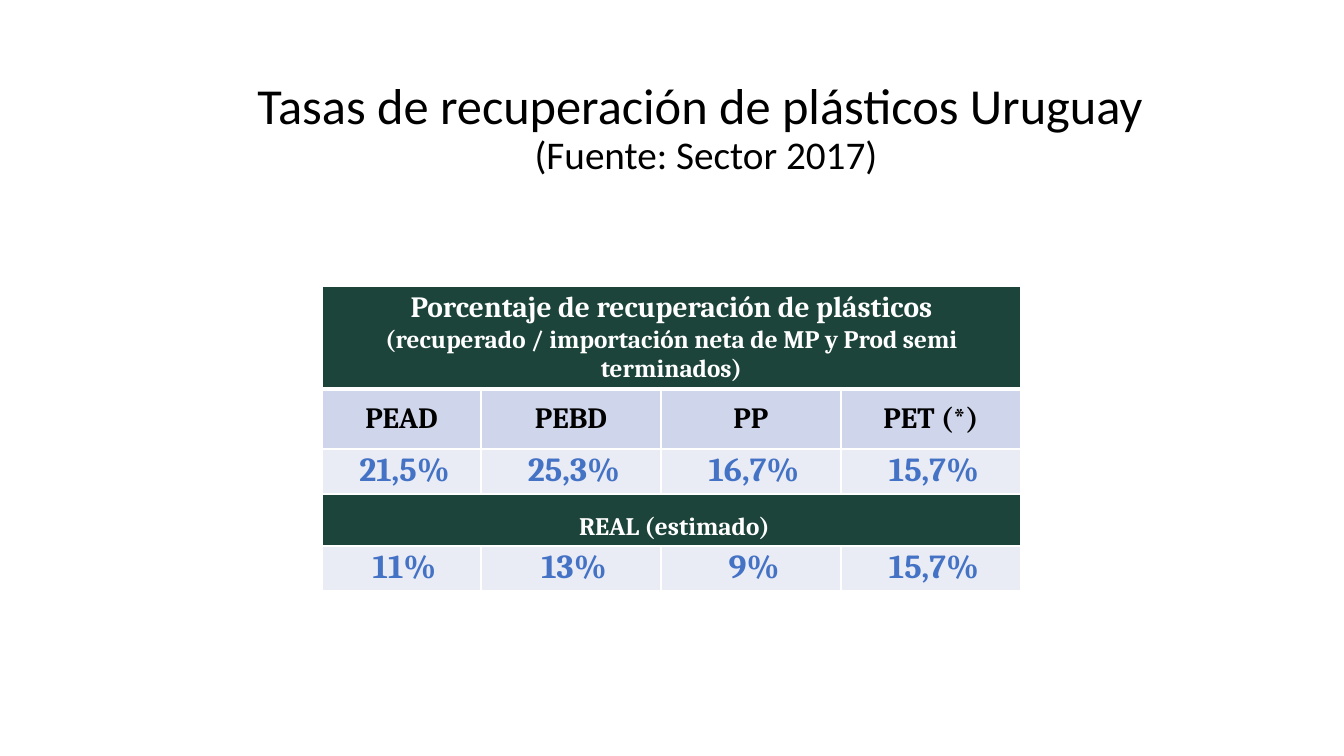
"""Slide with the recovery rates of plastics in Uruguay."""
from pptx import Presentation
from pptx import util as u
from pptx.dml.color import RGBColor
from pptx.enum import text
from pptx.oxml.ns import qn
from lxml import etree

WHITE = RGBColor(0xFF, 0xFF, 0xFF)
BLACK = RGBColor(0, 0, 0)
GREEN = RGBColor(0x1C, 0x44, 0x3A)
BLUE = RGBColor(0x44, 0x72, 0xC4)
LAVENDER = RGBColor(0xCF, 0xD5, 0xEA)
PALE = RGBColor(0xE9, 0xEB, 0xF5)

TITLE = [("Tasas de recuperación de plásticos Uruguay ", 36), ("(Fuente: Sector 2017)", 28)]
HEADING = [("Porcentaje de recuperación de plásticos", 21),
           ("(recuperado / importación neta de MP y Prod semi terminados)", 18)]
PLASTICS = ["PEAD", "PEBD", "PP", "PET (*)"]
DECLARED = ["21,5%", "25,3%", "16,7%", "15,7%"]
REAL = ["11%", "13%", "9%", "15,7%"]

TITLE_BOX = (199, 76, 1014, 175)
TABLE_AT = (322, 286)
COL_WIDTHS = [159, 180, 180, 180]
MIDDLE = (text.MSO_ANCHOR.MIDDLE, (7, 4, 7, 4))
BOTTOM = (text.MSO_ANCHOR.BOTTOM, (7, 1, 1, 4))
ROWS = [
    (103, [HEADING], GREEN, WHITE, MIDDLE),
    (60, [[(name, 21)] for name in PLASTICS], LAVENDER, BLACK, MIDDLE),
    (45, [[(rate, 24)] for rate in DECLARED], PALE, BLUE, BOTTOM),
    (52, [[("REAL (estimado)", 18)]], GREEN, WHITE, BOTTOM),
    (45, [[(rate, 24)] for rate in REAL], PALE, BLUE, BOTTOM),
]


def px(n):
    return u.Emu(round(n * 914400 / 100.8))


def write(tf, lines, *, font, color, bold=False, spacing=None):
    p = tf.paragraphs[0]
    p.alignment = text.PP_ALIGN.CENTER
    p.line_spacing = spacing
    for i, (words, size) in enumerate(lines):
        if i:
            p.add_line_break()
        r = p.add_run()
        r.text = words
        r.font.name = font
        r.font.size = u.Pt(size)
        r.font.bold = bold
        r.font.color.rgb = color


def set_borders(cell, top, bottom):
    tc_pr = cell._tc.get_or_add_tcPr()
    for side, width in (("L", 1), ("R", 1), ("T", top), ("B", bottom)):
        ln = etree.SubElement(tc_pr, qn(f"a:ln{side}"), w=str(u.Pt(width)))
        fill = etree.SubElement(ln, qn("a:solidFill"))
        etree.SubElement(fill, qn("a:srgbClr"), val=str(WHITE))


def add_title(s):
    sp = s.shapes.title
    sp.left, sp.top, sp.width, sp.height = map(px, TITLE_BOX)
    tf = sp.text_frame
    tf.word_wrap = True
    tf.auto_size = text.MSO_AUTO_SIZE.NONE
    tf.vertical_anchor = text.MSO_ANCHOR.TOP
    write(tf, TITLE, font="Calibri", color=BLACK, spacing=0.9)


def add_rates(s):
    size = (sum(COL_WIDTHS), sum(row[0] for row in ROWS))
    table = s.shapes.add_table(len(ROWS), len(COL_WIDTHS), *map(px, TABLE_AT + size)).table
    for col, width in zip(table.columns, COL_WIDTHS):
        col.width = px(width)
    last = len(COL_WIDTHS) - 1
    for i, (height, cells, fill, color, (anchor, insets)) in enumerate(ROWS):
        table.rows[i].height = px(height)
        if len(cells) == 1:
            table.cell(i, 0).merge(table.cell(i, last))
        for j in range(last + 1):
            cell = table.cell(i, j)
            set_borders(cell, 3 if i == 1 else 1, 3 if i == 0 else 1)
            cell.fill.solid()
            cell.fill.fore_color.rgb = fill
            cell.vertical_anchor = anchor
            (cell.margin_left, cell.margin_top,
             cell.margin_right, cell.margin_bottom) = map(px, insets)
            if j < len(cells):
                write(cell.text_frame, cells[j], font="Cambria", color=color, bold=True)


def main():
    prs = Presentation()
    prs.slide_width, prs.slide_height = px(1344), px(756)
    s = prs.slides.add_slide(prs.slide_layouts[5])
    add_title(s)
    add_rates(s)
    prs.save("out.pptx")


if __name__ == "__main__":
    main()
